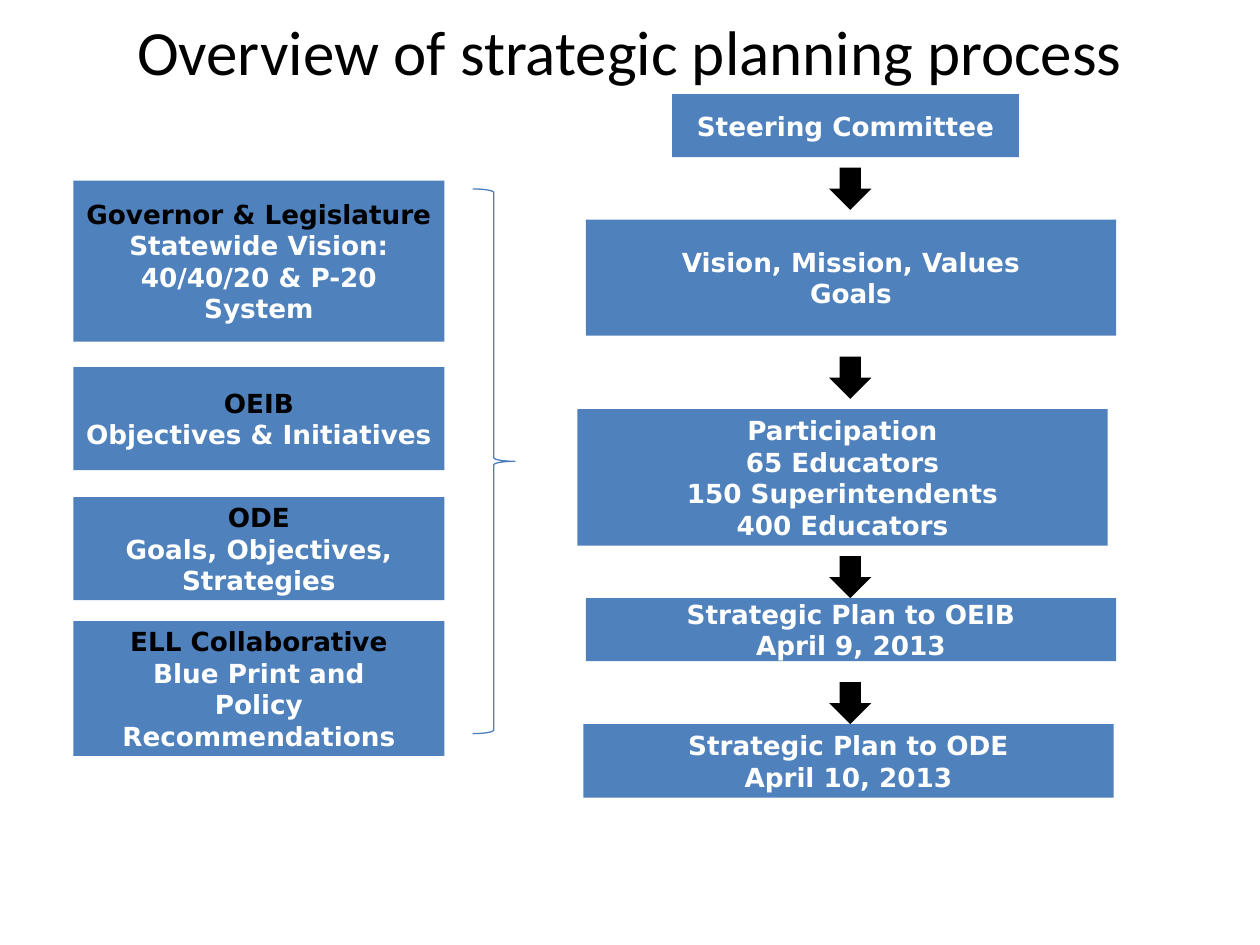
from pptx import Presentation
from pptx.dml.color import RGBColor as Rgb
from pptx.enum.shapes import MSO_SHAPE as Kind
from pptx.enum.text import MSO_ANCHOR as Anchor, MSO_AUTO_SIZE as Fit, PP_ALIGN as Align
from pptx.util import Cm, Pt

BLUE = Rgb(0x4F, 0x81, 0xBD)
EDGE = Rgb(0x4B, 0x7E, 0xBC)
BLACK = Rgb(0, 0, 0)
WHITE = Rgb(255, 255, 255)

SOURCES = [
    (0, 3.25, ["Governor & Legislature", "Statewide Vision: 40/40/20 & P-20 System"]),
    (3.76, 2.08, ["OEIB", "Objectives & Initiatives"]),
    (6.38, 2.08, ["ODE", "Goals, Objectives, Strategies"]),
    (8.88, 2.72, ["ELL Collaborative", "Blue Print and", "Policy Recommendations"]),
]
STEPS = [
    (1.91, 0, 6.99, 1.27, ["Steering Committee"]),
    (0.17, 2.53, 10.69, 2.34, ["Vision, Mission, Values", "Goals"]),
    (0, 6.35, 10.69, 2.75,
     ["Participation", "65 Educators", "150 Superintendents", "400 Educators"]),
    (0.17, 10.16, 10.69, 1.27, ["Strategic Plan to OEIB", "April 9, 2013"]),
    (0.12, 12.7, 10.69, 1.48, ["Strategic Plan to ODE", "April 10, 2013"]),
]
DROPS = [1.48, 5.29, 9.31, 11.85]


def write(frame, lines, size=15, font="DejaVu Sans", bold=True, color=WHITE, head=None):
    """Fill a text frame with centred lines; head colours the first one."""
    frame.word_wrap = True
    frame.auto_size = Fit.NONE
    frame.vertical_anchor = Anchor.MIDDLE
    frame.margin_left = frame.margin_right = Cm(0.25)
    frame.margin_top = frame.margin_bottom = Cm(0.13)
    for i, line in enumerate(lines):
        para = frame.paragraphs[0] if i == 0 else frame.add_paragraph()
        para.alignment = Align.CENTER
        run = para.add_run()
        run.text = line
        run.font.size = Pt(size)
        run.font.name = font
        run.font.bold = bold
        run.font.color.rgb = head if head is not None and i == 0 else color


def draw(slide, kind, x, y, w, h, fill=None):
    """Add a plain preset shape, measured in centimetres."""
    shape = slide.shapes.add_shape(kind, Cm(x), Cm(y), Cm(w), Cm(h))
    shape.shadow.inherit = False
    shape.line.fill.background()
    if fill is None:
        shape.fill.background()
    else:
        shape.fill.solid()
        shape.fill.fore_color.rgb = fill
    return shape


def add_title(slide, x, y, w, h):
    """Place and format the slide title."""
    title = slide.shapes.title
    title.left, title.top, title.width, title.height = Cm(x), Cm(y), Cm(w), Cm(h)
    write(title.text_frame, ["Overview of strategic planning process"],
          size=36, font="Calibri", bold=False, color=BLACK)


def add_brace(slide, x, y, w, h):
    """Draw the brace that gathers the sources."""
    brace = draw(slide, Kind.RIGHT_BRACE, x, y, w, h)
    brace.line.color.rgb = EDGE
    brace.line.width = Pt(0.75)


def add_sources(slide, x, y, w):
    """Stack the source boxes in the left column."""
    for top, high, lines in SOURCES:
        box = draw(slide, Kind.RECTANGLE, x, y + top, w, high, BLUE)
        write(box.text_frame, lines, head=BLACK)


def add_steps(slide, x, y, w):
    """Lay out the steps and the arrows between them."""
    for left, top, wide, high, lines in STEPS:
        box = draw(slide, Kind.RECTANGLE, x + left, y + top, wide, high, BLUE)
        write(box.text_frame, lines)
    size = 0.85
    for top in DROPS:
        arrow = draw(slide, Kind.RIGHT_ARROW, x + (w - size) / 2, y + top, size, size, BLACK)
        arrow.rotation = 90


def main():
    """Build the slide and save it."""
    deck = Presentation()
    deck.slide_width, deck.slide_height = Cm(25.4), Cm(19.05)
    slide = deck.slides.add_slide(deck.slide_layouts[5])
    add_title(slide, 0.42, 0.11, 24.55, 1.8)
    add_brace(slide, 9.53, 3.81, 0.85, 10.98)
    add_sources(slide, 1.48, 3.64, 7.48)
    add_steps(slide, 11.64, 1.9, 11)
    deck.save("out.pptx")


if __name__ == "__main__":
    main()
